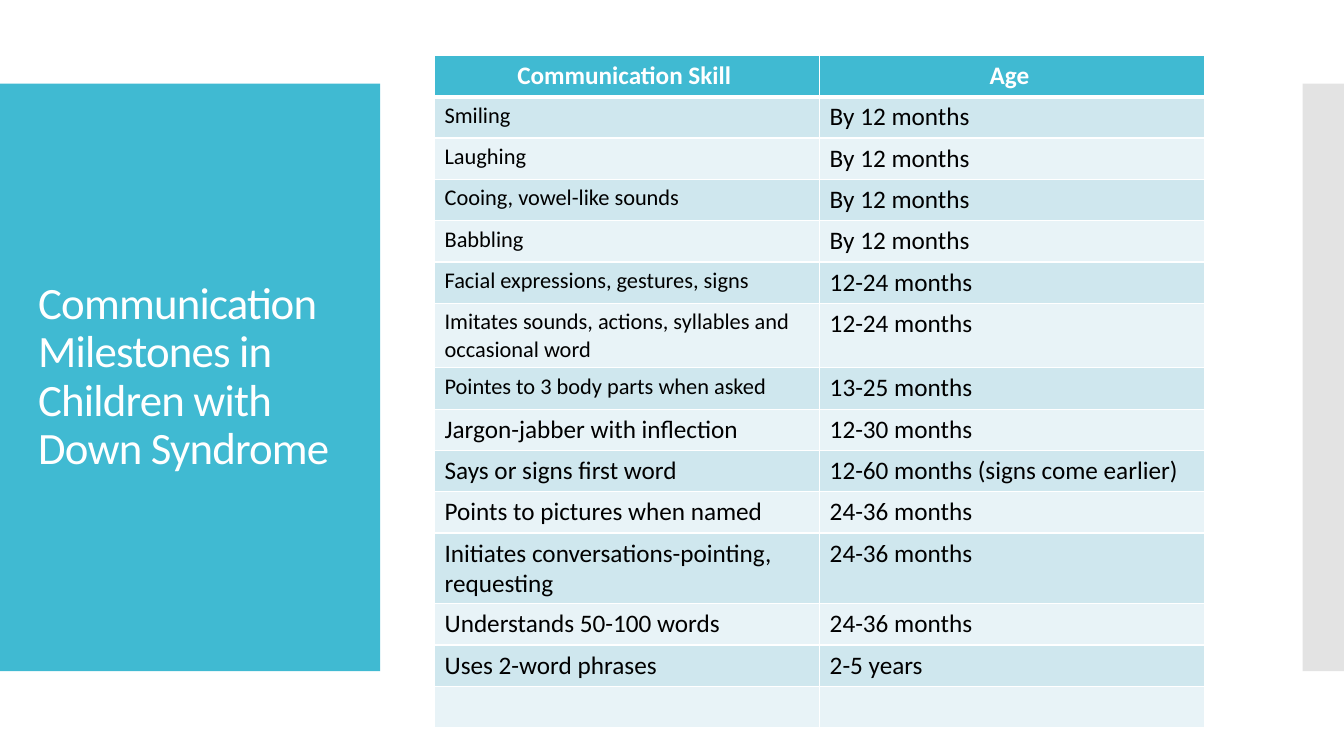
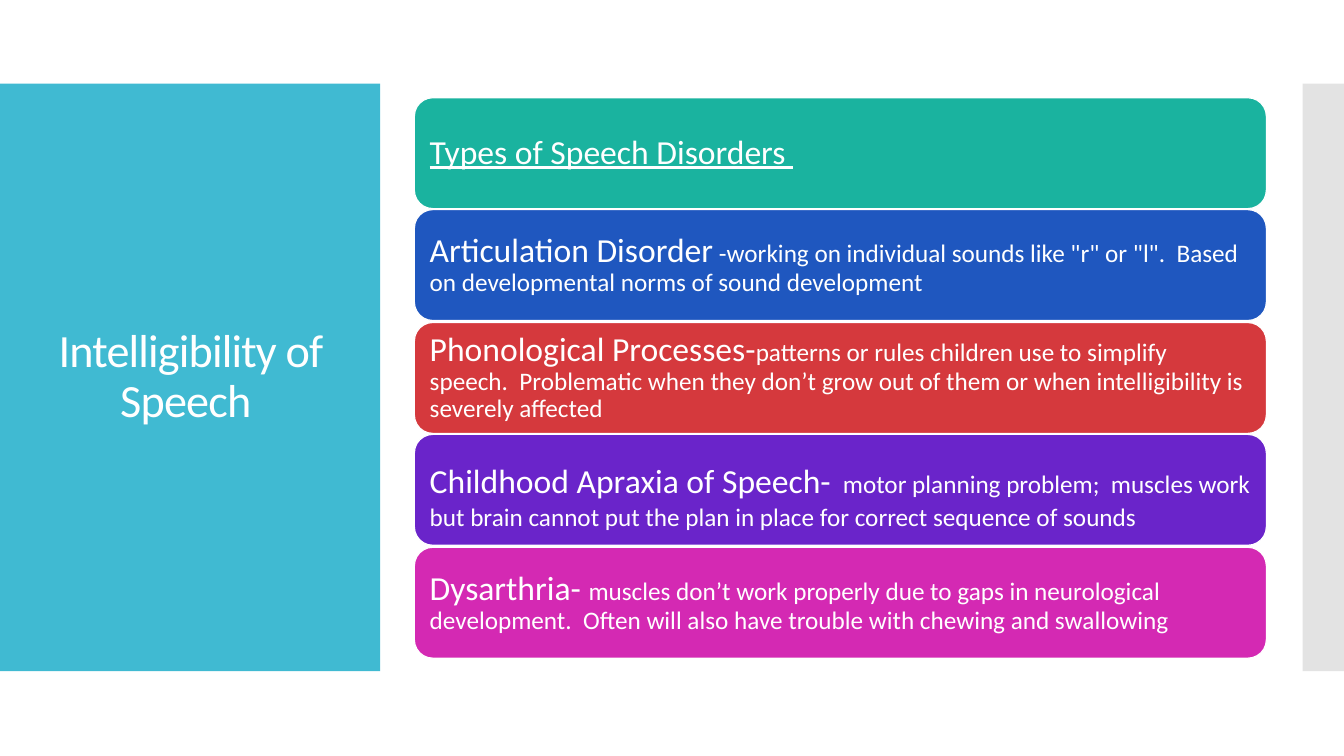
from lxml.etree import SubElement
from pptx import Presentation
from pptx.dml.color import RGBColor as RGB
from pptx.enum.shapes import MSO_SHAPE as Kind
from pptx.enum.text import MSO_ANCHOR as Anchor, PP_ALIGN as Align
from pptx.oxml import parse_xml
from pptx.oxml.ns import nsdecls, qn
from pptx.util import Pt

PX = 9144
FONT = "Calibri"
HUES = {
    "white": "FFFFFF", "black": "000000", "teal": "40BAD2", "gray": "C8C8C8",
    "dark": "CFE7EE", "light": "E8F3F7", "green": "1AB39F", "blue": "1F57BF",
    "red": "D5393D", "purple": "6A24CA", "pink": "D429B3",
}
HEAD = ("Communication Skill ", "Age ")
SKILLS = [
    ("Smiling", 16, "By 12 months", 41),
    ("Laughing", 16, "By 12 months", 41),
    ("Cooing, vowel-like sounds", 16, "By 12 months", 41),
    ("Babbling", 16, "By 12 months", 41),
    ("Facial expressions, gestures, signs", 16, "12-24 months", 41),
    ("Imitates sounds, actions, syllables and occasional word", 16, "12-24 months", 64),
    ("Pointes to 3 body parts when asked", 16, "13-25 months", 41),
    ("Jargon-jabber with inflection", 18, "12-30 months", 41),
    ("Says or signs first word", 18, "12-60 months (signs come earlier)", 41),
    ("Points to pictures when named", 18, "24-36 months", 41),
    ("Initiates conversations-pointing, requesting", 18, "24-36 months", 70),
    ("Understands 50-100 words", 18, "24-36 months", 41),
    ("Uses 2-word phrases", 18, "2-5 years", 41),
    ("", 18, "", 41),
]
TYPES = [
    ("green", [("Types of Speech Disorders ", 24)]),
    ("blue", [
        ("Articulation Disorder", 24),
        (" -working on individual sounds like \"r\" or \"l\".  Based on "
         "developmental norms of sound development", 18)]),
    ("red", [
        ("Phonological Processes-", 24),
        ("patterns or rules children use to simplify speech.  Problematic when they "
         "don’t grow out of them or when intelligibility is severely affected", 18)]),
    ("purple", [
        ("Childhood Apraxia of Speech-", 24), (" ", 38),
        ("motor planning problem;  muscles work but brain cannot put the plan in "
         "place for correct sequence of sounds", 18)]),
    ("pink", [
        ("Dysarthria- ", 24),
        ("muscles don’t work properly due to gaps in neurological development.  "
         "Often will also have trouble with chewing and swallowing", 18)]),
]


def rgb(hue):
    return RGB.from_string(HUES[hue])


def box(*at):
    return [v * PX for v in at]


def paint(part, hue):
    part.fill.solid()
    part.fill.fore_color.rgb = rgb(hue)


def style(font, size, hue="white", bold=False):
    font.name, font.size, font.bold = FONT, Pt(size), bold
    font.color.rgb = rgb(hue)


def panel(slide, kind, at, hue):
    shape = slide.shapes.add_shape(kind, *box(*at))
    shape.shadow.inherit = False
    paint(shape, hue)
    shape.line.fill.background()
    return shape


def start(deck, title, size, align):
    slide = deck.slides.add_slide(deck.slide_layouts[6])
    panel(slide, Kind.RECTANGLE, (0, 83, 377, 583), "teal")
    side = panel(slide, Kind.RECTANGLE, (1292, 83, 41, 583), "gray")
    tint = side.fill._xPr.find(".//" + qn("a:srgbClr"))
    SubElement(tint, qn("a:alpha"), val="50000")
    frame = slide.shapes.add_textbox(*box(28, 123, 322, 503)).text_frame
    frame.word_wrap = True
    frame.vertical_anchor = Anchor.MIDDLE
    para = frame.paragraphs[0]
    para.text = title
    para.alignment, para.line_spacing = align, 0.9
    run = para.runs[0]
    style(run.font, size)
    run.font._element.set("spc", "-60")
    return slide


def edge(cell, row):
    widths = {"L": 1, "R": 1, "T": 3 if row == 1 else 1, "B": 3 if row == 0 else 1}
    props = cell._tc.get_or_add_tcPr()
    for spot, (side, width) in enumerate(widths.items()):
        props.insert(spot, parse_xml(
            f'<a:ln{side} {nsdecls("a")} w="{Pt(width)}"><a:solidFill>'
            f'<a:srgbClr val="{HUES["white"]}"/></a:solidFill></a:ln{side}>'))


def fill_cell(cell, row, text, size):
    top = row == 0
    paint(cell, "teal" if top else ("light", "dark")[row % 2])
    edge(cell, row)
    para = cell.text_frame.paragraphs[0]
    para.text = text
    para.alignment = Align.CENTER if top else Align.LEFT
    style(para.font, size)
    for run in para.runs:
        style(run.font, size, "white" if top else "black", top)


def milestones(deck):
    slide = start(deck, "Communication Milestones in Children with Down Syndrome",
                  32, Align.LEFT)
    rows = [(HEAD[0], 18, HEAD[1], 41)] + SKILLS
    high = sum(row[3] for row in rows)
    table = slide.shapes.add_table(len(rows), 2, *box(431, 55, 764, high)).table
    for col in table.columns:
        col.width = 382 * PX
    for num, (skill, size, age, tall) in enumerate(rows):
        table.rows[num].height = tall * PX
        fill_cell(table.cell(num, 0), num, skill, size)
        fill_cell(table.cell(num, 1), num, age, 18)


def disorders(deck):
    slide = start(deck, "Intelligibility of Speech ", 33, Align.CENTER)
    for num, (hue, parts) in enumerate(TYPES):
        top = 97 + num * 223 // 2
        card = panel(slide, Kind.ROUNDED_RECTANGLE, (411, top, 845, 110), hue)
        card.line.color.rgb = rgb("white")
        card.line.width = Pt(0.85)
        frame = card.text_frame
        frame.word_wrap = True
        frame.vertical_anchor = Anchor.MIDDLE
        frame.margin_left = frame.margin_right = 10 * PX
        frame.margin_top = frame.margin_bottom = 10 * PX
        para = frame.paragraphs[0]
        para.alignment, para.line_spacing = Align.LEFT, 0.9
        for text, size in parts:
            run = para.add_run()
            run.text = text
            style(run.font, size)
            run.font.underline = num == 0


def main():
    deck = Presentation()
    deck.slide_width, deck.slide_height = box(1333, 750)
    milestones(deck)
    disorders(deck)
    deck.save("out.pptx")


if __name__ == "__main__":
    main()
